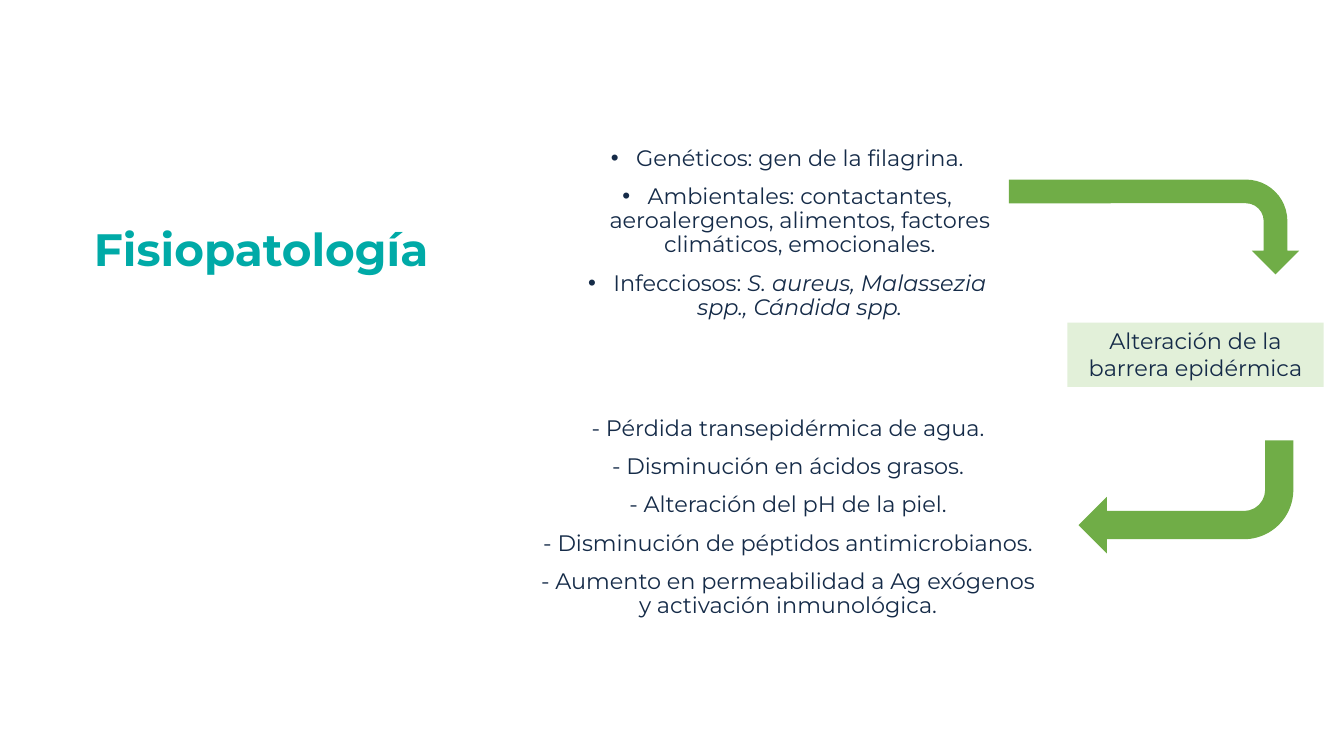
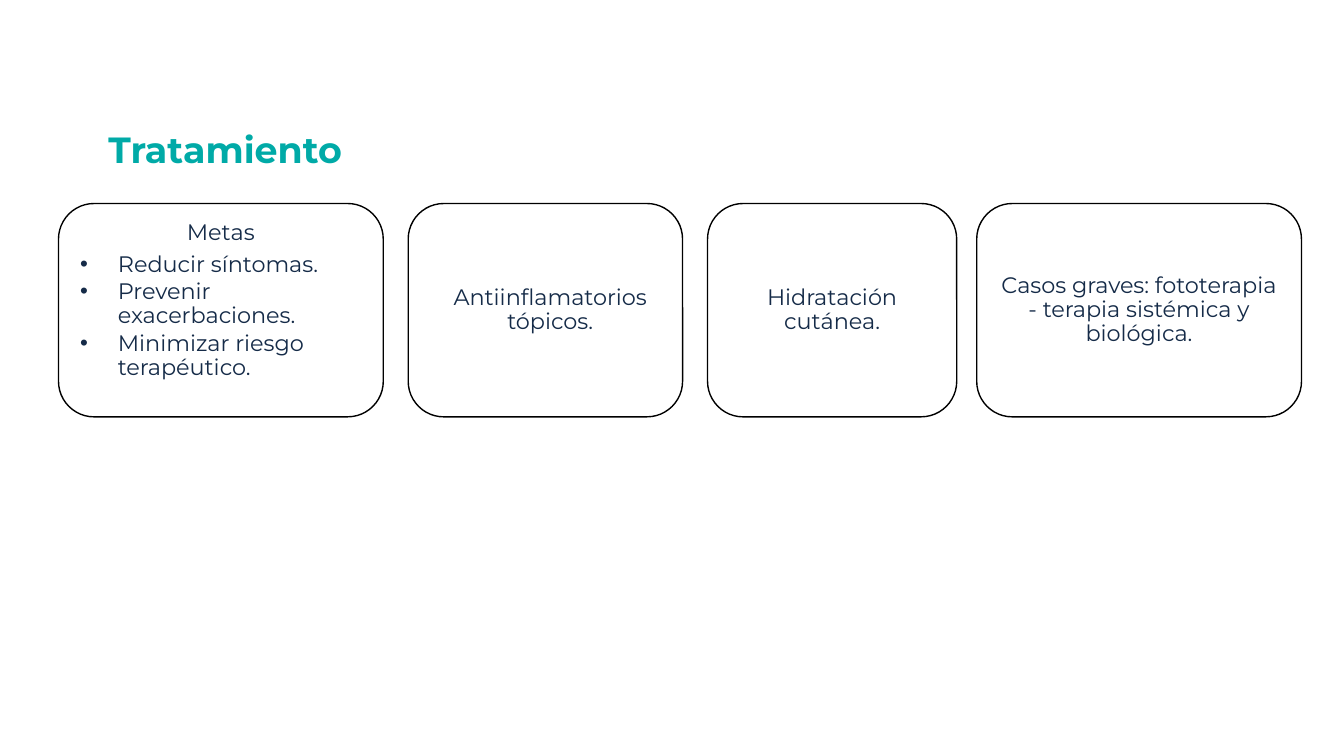
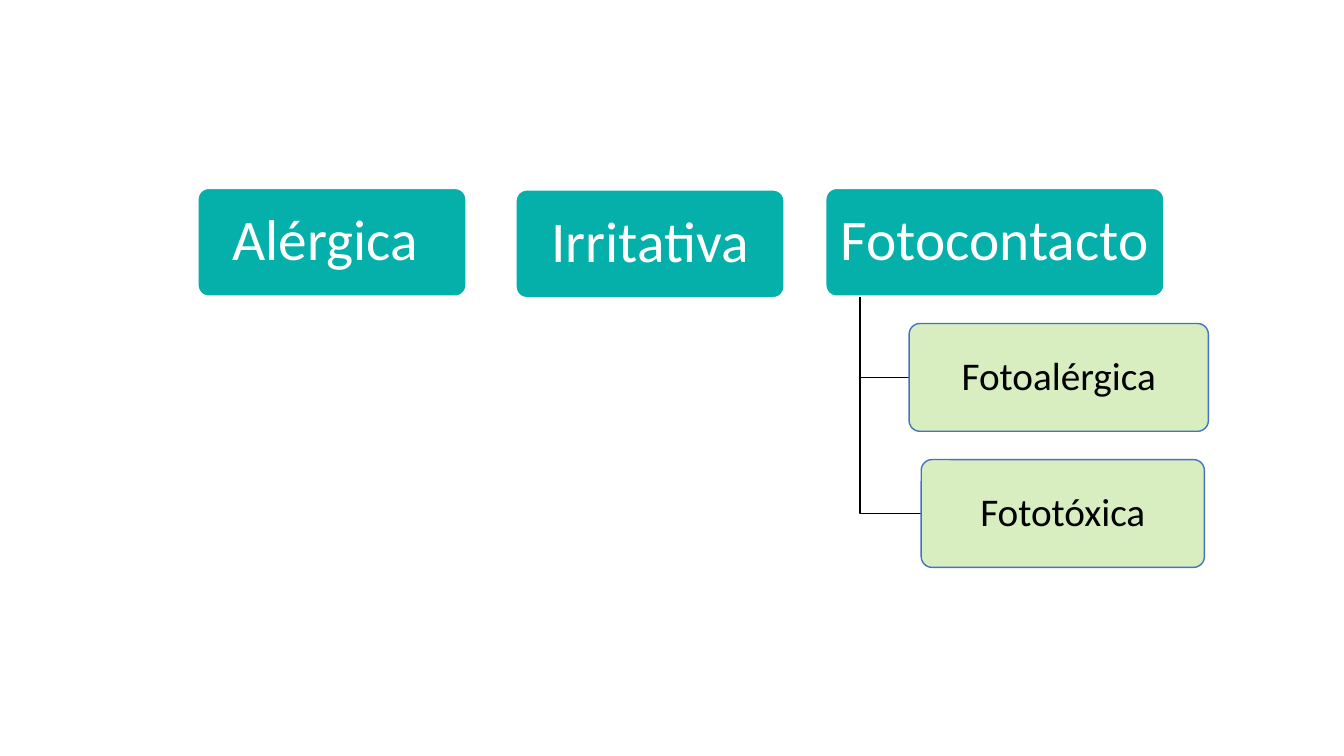
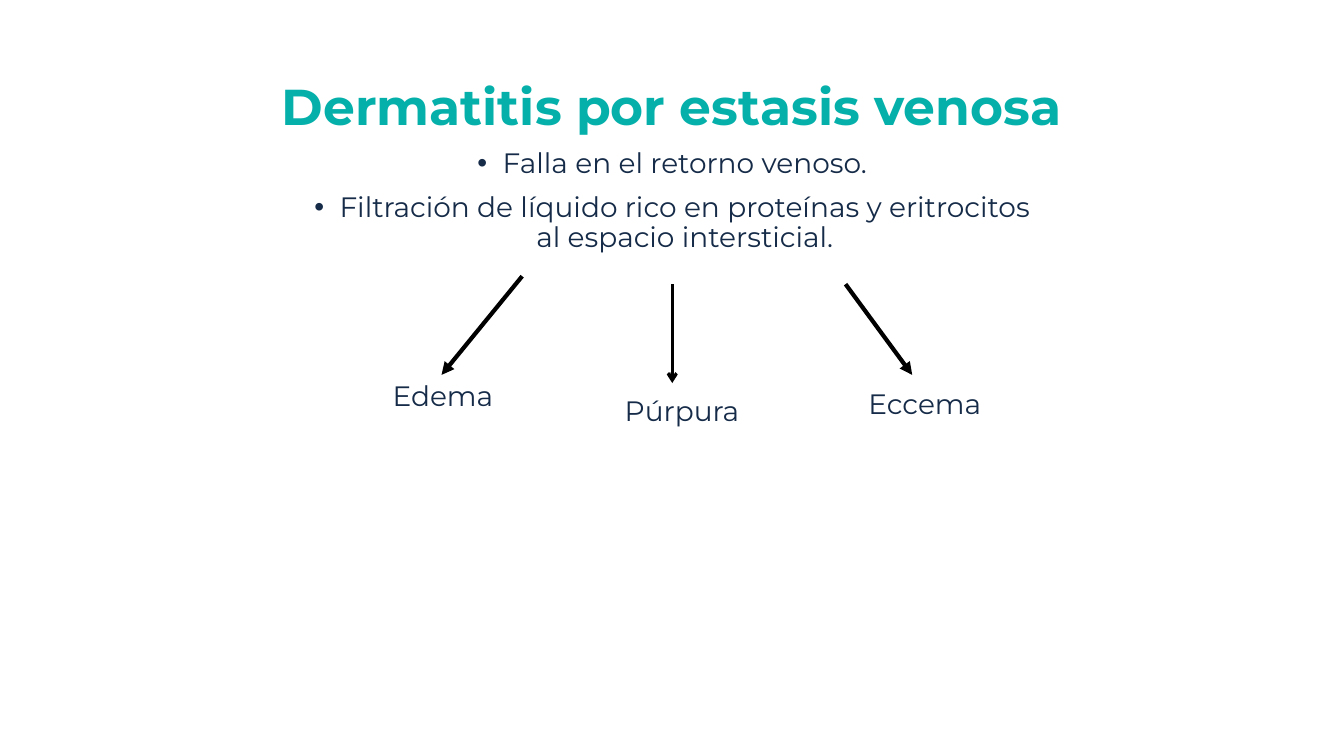
from dataclasses import dataclass, replace

from pptx import Presentation
from pptx.dml.color import RGBColor
from pptx.enum.shapes import MSO_CONNECTOR, MSO_SHAPE
from pptx.enum.text import MSO_ANCHOR, PP_ALIGN
from pptx.oxml.ns import qn
from pptx.oxml.xmlchemy import OxmlElement
from pptx.util import Pt

RECT, ROUNDED, BENT = MSO_SHAPE.RECTANGLE, MSO_SHAPE.ROUNDED_RECTANGLE, MSO_SHAPE.BENT_ARROW
STRAIGHT = MSO_CONNECTOR.STRAIGHT
LEFT, CENTER = PP_ALIGN.LEFT, PP_ALIGN.CENTER
TOP, MIDDLE = MSO_ANCHOR.TOP, MSO_ANCHOR.MIDDLE


@dataclass(frozen=True)
class Theme:
    heading: str = "Montserrat"
    body: str = "Calibri"
    ink: str = "152B48"
    teal: str = "00AAA7"
    aqua: str = "06B0AA"
    green: str = "70AD47"
    pale_green: str = "E2F0D9"
    lime: str = "D4ECBA"
    blue: str = "4472C4"
    black: str = "000000"
    white: str = "FFFFFF"
    text: float = 16
    large: float = 20
    branch: float = 28
    root: float = 41


T = Theme()


@dataclass(frozen=True)
class TextStyle:
    size: float = T.text
    color: str = T.ink
    font: str = T.heading
    bold: bool = False
    align: int = CENTER
    spacing: float = 0.9
    before: float = 0
    after: float = 0
    indent: float = 0  # above zero: bulleted


BODY = TextStyle(before=10)
LARGE = replace(BODY, size=T.large)
TITLE = TextStyle(bold=True, color=T.teal)


# Text
def add_bullet(p, indent):
    pPr = p._p.get_or_add_pPr()
    pPr.set("marL", str(Pt(indent)))
    pPr.set("indent", str(-Pt(indent)))
    font = OxmlElement("a:buFont")
    font.set("typeface", "Arial")
    char = OxmlElement("a:buChar")
    char.set("char", "•")
    pPr.extend([font, char])


def write(tf, lines, anchor=TOP, insets=(7.2, 3.6, 7.2, 3.6)):
    """Write (text, style) pairs as paragraphs; text after * is italic."""
    tf.word_wrap = True
    tf.vertical_anchor = anchor
    tf.margin_left, tf.margin_top, tf.margin_right, tf.margin_bottom = map(Pt, insets)
    for i, (text, style) in enumerate(lines):
        p = tf.add_paragraph() if i else tf.paragraphs[0]
        if style.indent:
            add_bullet(p, style.indent)
        p.alignment = style.align
        p.line_spacing = style.spacing
        p.space_before = Pt(style.before if i else 0)
        p.space_after = Pt(style.after)
        for n, part in enumerate(text.split("*")):
            r = p.add_run()
            r.text = part
            r.font.name = style.font
            r.font.size = Pt(style.size)
            r.font.bold = style.bold
            r.font.italic = n % 2 == 1
            r.font.color.rgb = RGBColor.from_string(style.color)


def add_text(slide, box, texts, style, anchor=TOP):
    s = slide.shapes.add_textbox(*map(Pt, box))
    write(s.text_frame, [(t, style) for t in texts], anchor)


# Shapes and lines
def set_line(line, color, width=1):
    line.color.rgb = RGBColor.from_string(color)
    line.width = Pt(width)


def add_box(slide, kind, box, fill, line=None, radius=None, rotation=0, opacity=100):
    s = slide.shapes.add_shape(kind, *map(Pt, box))
    s.shadow.inherit = False
    s.rotation = rotation
    s.fill.solid()
    s.fill.fore_color.rgb = RGBColor.from_string(fill)
    if opacity < 100:
        alpha = OxmlElement("a:alpha")
        alpha.set("val", str(opacity * 1000))
        s._element.spPr.find(qn("a:solidFill"))[0].append(alpha)
    if line:
        set_line(s.line, line)
    else:
        s.line.fill.background()
    if radius:
        s.adjustments[0] = radius
    return s


def add_elbow(slide, x, top, right, bottom):
    fb = slide.shapes.build_freeform(Pt(x), Pt(top))
    fb.add_line_segments([(Pt(x), Pt(bottom)), (Pt(right), Pt(bottom))], close=False)
    s = fb.convert_to_shape()
    s.shadow.inherit = False
    s.fill.background()
    set_line(s.line, T.black)


def add_arrow(slide, start, end, width, head):
    c = slide.shapes.add_connector(STRAIGHT, *map(Pt, start + end))
    set_line(c.line, T.black, width)
    tail = OxmlElement("a:tailEnd")
    tail.set("type", head)
    c.line._get_or_add_ln().append(tail)
    c._element.spPr.append(OxmlElement("a:effectLst"))


# Slides
def pathophysiology(slide):
    s = add_box(slide, RECT, (762.5, 230.4, 183, 46), T.pale_green)
    write(s.text_frame, [("Alteración de la barrera epidérmica", TextStyle(spacing=1))])
    add_box(slide, BENT, (790.5, 58.5, 67.7, 207.3), T.green, rotation=90)
    add_box(slide, BENT, (770.4, 314.6, 153.4, 80.6), T.green, rotation=180)
    add_text(slide, (60, 156.2, 264, 46.8), ["Fisiopatología"],
             replace(TITLE, size=32.4, align=LEFT), MIDDLE)
    add_text(slide, (404, 101.5, 316.8, 174), [
        "Genéticos: gen de la filagrina.",
        "Ambientales: contactantes, aeroalergenos, alimentos, factores climáticos, emocionales.",
        "Infecciosos: *S. aureus, Malassezia spp., Cándida spp.",
    ], replace(BODY, indent=18))
    add_text(slide, (375, 294.5, 376, 189), [
        "- Pérdida transepidérmica de agua.",
        "- Disminución en ácidos grasos.",
        "- Alteración del pH de la piel.",
        "- Disminución de péptidos antimicrobianos.",
        "- Aumento en permeabilidad a Ag exógenos y activación inmunológica.",
    ], BODY)


def treatment(slide):
    plain = TextStyle()
    goal = TextStyle(align=LEFT, after=2.4, indent=27)
    goals = [("Metas", replace(plain, after=5.6))] + [(t, goal) for t in (
        "Reducir síntomas.", "Prevenir exacerbaciones.", "Minimizar riesgo terapéutico.")]
    # left, width, left and right inset, anchor, lines
    cards = [
        (41.8, 232, 8, 8, TOP, goals),
        (291.6, 196, 7, 0, MIDDLE, [("Antiinflamatorios tópicos.", plain)]),
        (505.4, 178, 6, 6, MIDDLE, [("Hidratación cutánea.", plain)]),
        (697.7, 232, 8, 8, MIDDLE,
         [("Casos graves: fototerapia - terapia sistémica y biológica.", plain)]),
    ]
    for left, width, pad_left, pad_right, anchor, lines in cards:
        s = add_box(slide, ROUNDED, (left, 145.4, width, 152.4), T.white, T.black)
        write(s.text_frame, lines, anchor, (pad_left, 5, pad_right, 5))
    add_text(slide, (41.8, 78.5, 238.3, 59.8), ["Tratamiento"],
             replace(TITLE, size=26), MIDDLE)


def contact_types(slide):
    height = 77
    root = TextStyle(T.root, T.white, T.body)
    branch = TextStyle(T.branch, T.black, T.body)
    # Main types
    for text, left, top, width in (("Alérgica ", 141.4, 134.6, 191.5),
                                   ("Irritativa", 368.6, 135.7, 191.5),
                                   ("Fotocontacto", 589.9, 134.6, 241.5)):
        s = add_box(slide, ROUNDED, (left, top, width, height), T.aqua, T.white, 0.1)
        write(s.text_frame, [(text, root)], MIDDLE, (6, 4, 6, 4))
    # Subtypes, each tied to the last main type
    for text, left, top, width in (("Fotoalérgica", 649.4, 231.1, 213.8),
                                   ("Fototóxica", 658, 328.3, 202.3)):
        add_elbow(slide, 614.2, 212, left, top + height / 2)
        s = add_box(slide, ROUNDED, (left, top, width, height), T.lime, T.blue, 0.1, opacity=90)
        write(s.text_frame, [(text, branch)], MIDDLE, (4, 3, 4, 3))


def venous_stasis(slide):
    add_arrow(slide, (373, 197.3), (315.4, 267.8), 3, "triangle")
    add_arrow(slide, (480.2, 203), (480.2, 273.6), 2.25, "arrow")
    add_arrow(slide, (604, 203), (651.6, 267.8), 3, "triangle")
    add_text(slide, (211.7, 103, 537, 129.6), [
        "Falla en el retorno venoso.",
        "Filtración de líquido rico en proteínas y eritrocitos al espacio intersticial.",
    ], replace(LARGE, indent=18))
    for text, left, top in (("Edema", 249.8, 269.3), ("Púrpura", 420.5, 280.1),
                            ("Eccema", 594, 275)):
        add_text(slide, (left, top, 133.2, 48.2), [text], LARGE)
    add_text(slide, (28, 54.7, 903.6, 88.6), ["Dermatitis por estasis venosa"],
             replace(TITLE, size=36, color=T.aqua))


def main():
    prs = Presentation()
    prs.slide_width, prs.slide_height = Pt(960), Pt(540)
    for build in (pathophysiology, treatment, contact_types, venous_stasis):
        build(prs.slides.add_slide(prs.slide_layouts[6]))
    prs.save("out.pptx")


if __name__ == "__main__":
    main()
